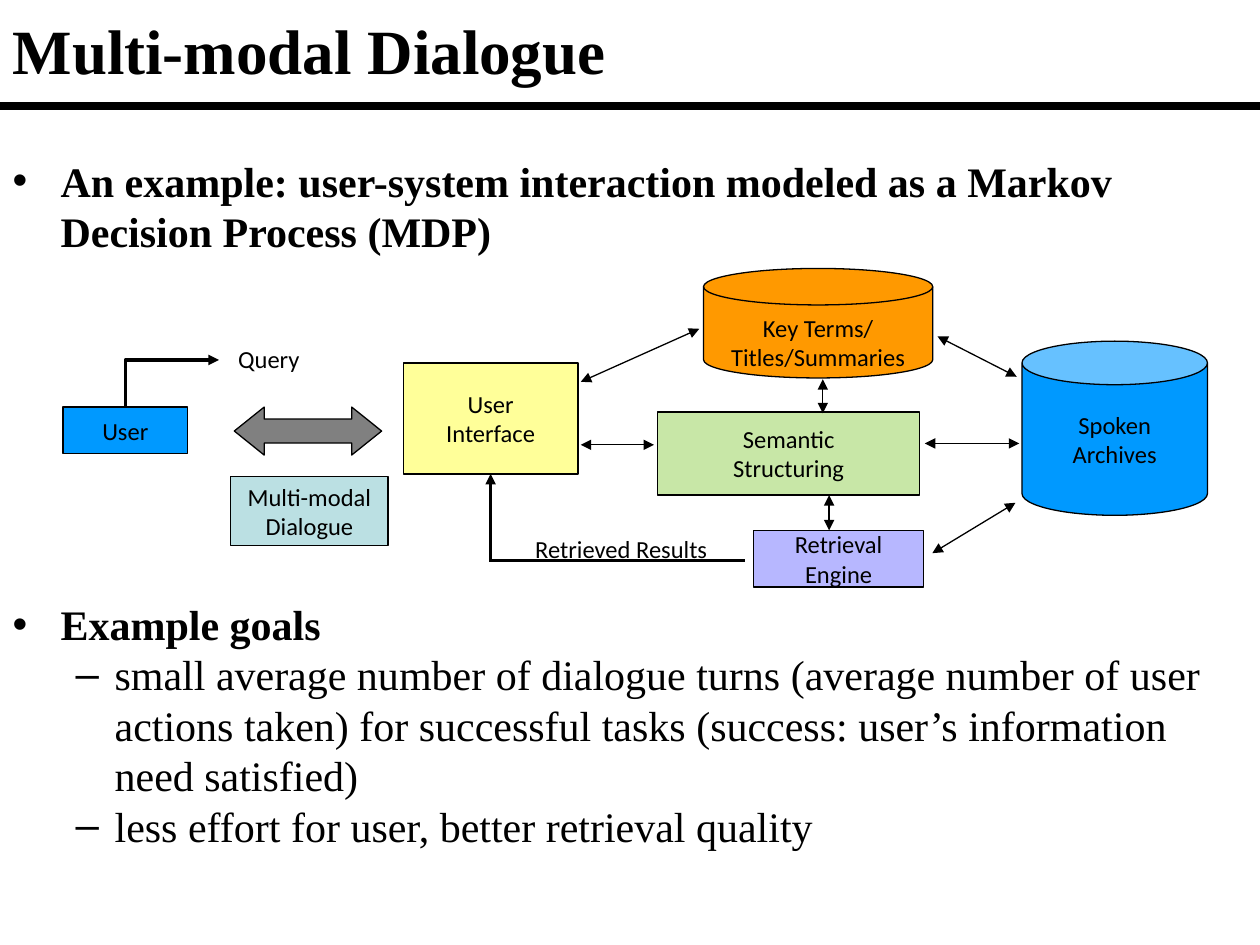
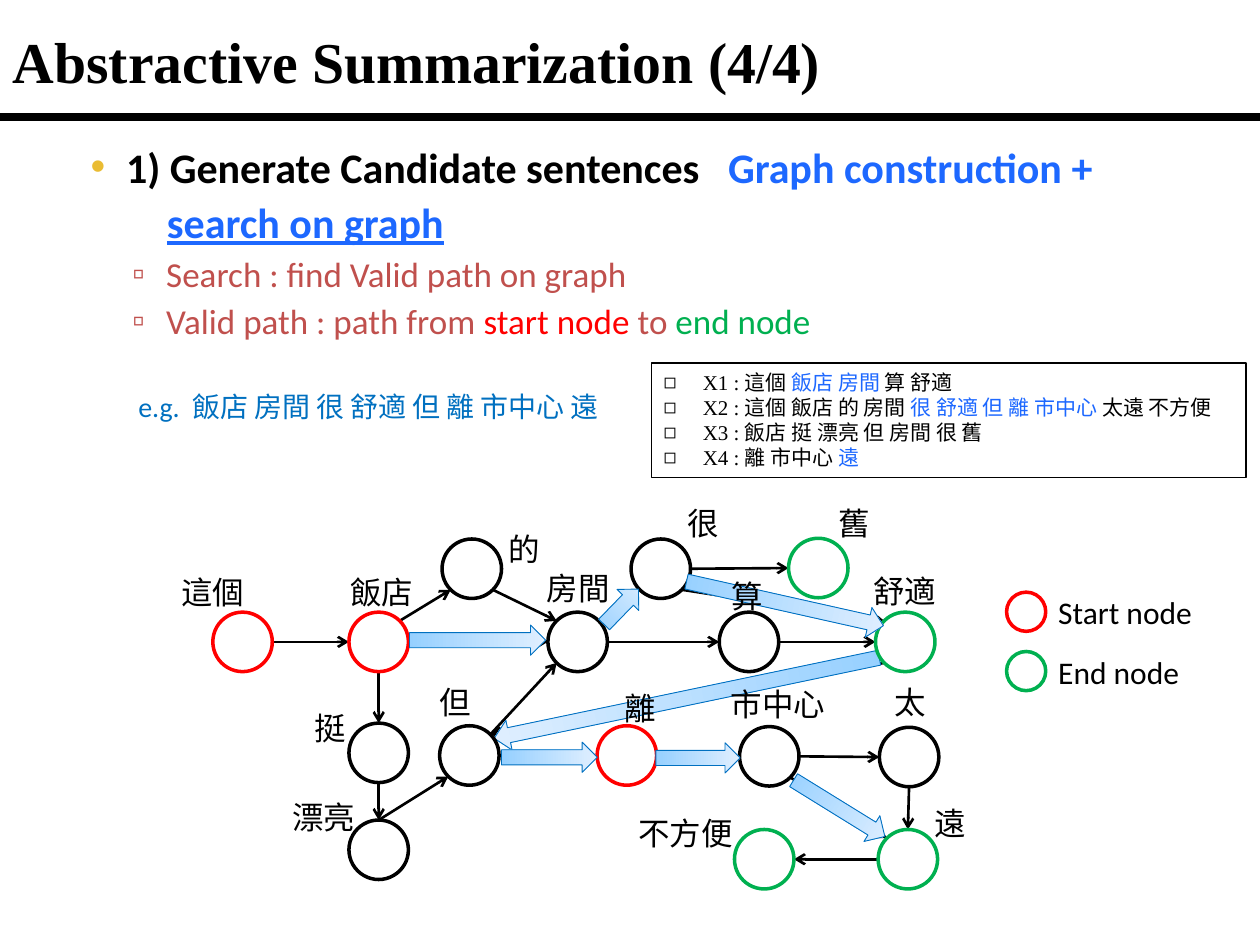
"""Builds two slides: a multi-modal dialogue diagram and a word graph for summarization."""
from dataclasses import dataclass
from math import atan2, degrees, hypot, sqrt

from lxml.etree import SubElement
from pptx import Presentation
from pptx.dml.color import RGBColor
from pptx.enum.shapes import MSO_CONNECTOR, MSO_SHAPE
from pptx.enum.text import MSO_ANCHOR, MSO_AUTO_SIZE, PP_ALIGN
from pptx.oxml.ns import qn
from pptx.util import Pt


@dataclass(frozen=True)
class Theme:
    """Colours, fonts and type sizes shared by the slides."""
    black: str = "000000"
    white: str = "FFFFFF"
    blue: str = "1D68FF"
    example_blue: str = "0070C0"
    sky: str = "0099FF"
    orange: str = "FF9900"
    yellow: str = "FFFF99"
    lilac: str = "B7B7FF"
    teal: str = "BBE0E3"
    lime: str = "92D050"
    gray: str = "808080"
    gold: str = "EABC33"
    brick: str = "C0504D"
    red: str = "FF0000"
    green: str = "00B050"
    path_dark: str = "96D0FF"
    path_light: str = "E0EFFF"
    serif: str = "Times New Roman"
    sans: str = "Calibri"
    label: str = "Arial"
    heading: int = 24
    subheading: int = 20
    node: int = 18
    example: int = 16
    diagram: int = 14
    sentence: int = 12


THEME = Theme()


@dataclass(frozen=True)
class Run:
    """One stretch of text; gap widens its letter spacing in points."""
    text: str
    color: str = THEME.black
    size: float = THEME.heading
    font: str = THEME.serif
    bold: bool = False
    underline: bool = False
    gap: float = 0


@dataclass(frozen=True)
class Item:
    """One paragraph of a list."""
    runs: tuple
    left: float = 0
    hanging: float = 0
    bullet: str = ""
    bullet_color: str = THEME.black
    level: int = 0
    before: float = 0
    line_spacing: float = 1


def serif_head(text, line_spacing=1):
    return Item((Run(text, bold=True),), 27.4, 27.4, "•", before=4.8, line_spacing=line_spacing)


def goal(text):
    return Item((Run(text),), 58.3, 22.3, "–", level=1)


def sans_head(*runs, **layout):
    return Item(tuple(Run(text, color, font=THEME.sans, bold=True, **style)
                      for text, color, style in runs), before=3, **layout)


def rule_item(*pairs):
    return Item(tuple(Run(text, color, THEME.subheading, THEME.sans) for text, color in pairs),
                51.8, 19.4, "▫", THEME.brick, 1, 3)


def sentence(*pairs):
    return Item(tuple(Run(text, color, THEME.sentence) for text, color in pairs), 22.3, 22.3, "◻")


MODEL = [serif_head("An example: user-system interaction modeled as a Markov Decision Process (MDP)")]
GOALS = [
    serif_head("Example goals", 1.2),
    goal("small average number of dialogue turns (average number of user actions taken) "
         "for successful tasks (success: user’s information need satisfied)"),
    goal("less effort for user, better retrieval quality"),
]
BOXES = [
    ("Key Terms/\nTitles/Summaries", MSO_SHAPE.FLOWCHART_MAGNETIC_DISK, (402, 153.4, 131, 62.6), THEME.orange),
    ("Spoken\nArchives", MSO_SHAPE.CAN, (584, 195, 106, 99.5), THEME.sky),
    ("User", MSO_SHAPE.RECTANGLE, (36, 232.6, 71.3, 26.6), THEME.sky),
    ("Retrieval\nEngine", MSO_SHAPE.RECTANGLE, (430.6, 303.1, 97.2, 32.4), THEME.lilac),
    ("User\nInterface", MSO_SHAPE.RECTANGLE, (230.4, 207.4, 100, 63.4), THEME.yellow),
    ("Multi-modal\nDialogue", MSO_SHAPE.RECTANGLE, (131.8, 272.2, 90, 39.6), THEME.teal),
    ("Semantic\nStructuring", MSO_SHAPE.RECTANGLE, (375.8, 235.4, 149.8, 47.5), THEME.lime),
    ("", MSO_SHAPE.LEFT_RIGHT_ARROW, (133.9, 232.6, 84.2, 27.4), THEME.gray),
]
TWO_WAY_LINKS = [
    (535.7, 192.2, 581, 215.3), (399.6, 187.9, 331.9, 218.2), (528.5, 253.4, 582.5, 253.4),
    (532.8, 316.1, 580.3, 287.3), (470.2, 216.7, 470.2, 236.2), (473.8, 283, 473.8, 303.1),
    (331.9, 254.2, 373.7, 254.2),
]
CAPTIONS = [("Retrieved Results", (278, 301.7, 154, 23)), ("Query", (127.4, 193, 52.6, 23))]

SEARCH = [
    sans_head(("1) Generate Candidate sentences", THEME.black, {}), (" ", THEME.black, {"gap": 10.8}),
              ("Graph construction +", THEME.blue, {}),
              left=28.8, hanging=20.2, bullet="•", bullet_color=THEME.gold),
    sans_head(("search on graph", THEME.blue, {"underline": True}), left=52.2),
    rule_item(("Search : find Valid path on graph", THEME.brick)),
    rule_item(("Valid path : path from ", THEME.brick), ("start node ", THEME.red),
              ("to ", THEME.brick), ("end node", THEME.green)),
]
SENTENCES = [
    sentence(("X1 : 這個 ", THEME.black), ("飯店 房間 ", THEME.blue), ("算 舒適", THEME.black)),
    sentence(("X2 : 這個 飯店 的 房間 ", THEME.black), ("很 舒適 但 離 市中心 ", THEME.blue),
             ("太遠 不方便", THEME.black)),
    sentence(("X3 : 飯店 挺 漂亮 但 房間 很 舊", THEME.black)),
    sentence(("X4 : 離 市中心 ", THEME.black), ("遠", THEME.blue)),
]
EXAMPLE = [Item(tuple(Run(text, THEME.example_blue, THEME.example, THEME.sans, gap=gap)
                      for text, gap in [("e.g.", 0), (" ", 3.6), ("飯店 房間 很 舒適 但 離 市中心 遠", 0)]))]
NODES = {
    "這個": ((138.6, 366.8), (96.5, 324), THEME.red),
    "飯店": ((216.4, 366.8), (193, 324), THEME.red),
    "房間": ((330.1, 366.8), (305.3, 321.8), THEME.black),
    "算": ((428, 366.8), (411.1, 326.2), THEME.black),
    "舒適": ((517.3, 366.8), (491.8, 323.3), THEME.green),
    "的": ((269.6, 325), (283.7, 299.5), THEME.black),
    "很": ((377.6, 325), (385.9, 284.4), THEME.black),
    "舊": ((467.6, 324.6), (472.3, 284.4), THEME.green),
    "挺": ((216.4, 430.2), (172.8, 401.8), THEME.black),
    "漂亮": ((216.4, 485.6), (159.8, 452.2), THEME.black),
    "但": ((268.2, 431.7), (244.1, 386.6), THEME.black),
    "離": ((358.2, 431.7), (349.9, 390.2), THEME.red),
    "市中心": ((439.6, 432.2), (410.4, 388.1), THEME.black),
    "太": ((519.5, 432.6), (504, 386.6), THEME.black),
    "遠": ((518.8, 491), (527, 455.8), THEME.green),
    "不方便": ((436.7, 491), (357.8, 461.5), THEME.green),
}
EDGES = [
    ("這個", "E", "飯店", "W"), ("飯店", "E", "房間", "W"), ("房間", "E", "算", "W"),
    ("算", "E", "舒適", "W"), ("很", "E", "舊", "W"), ("飯店", "NE", "的", "SW"),
    ("的", "SE", "房間", "NW"), ("房間", "NE", "很", "SW"), ("很", "SE", "舒適", "NW"),
    ("飯店", "S", "挺", "N"), ("挺", "S", "漂亮", "N"), ("漂亮", "N", "但", "SW"),
    ("但", "NE", "房間", "SW"), ("舒適", "SW", "但", "NE"), ("但", "E", "離", "W"),
    ("離", "E", "市中心", "W"), ("市中心", "E", "太", "W"), ("太", "S", "遠", "N"),
    ("遠", "W", "不方便", "E"), ("市中心", "SE", "遠", "NW"),
]
RETURN_PATH = (502.4, 375.9, 282.4, 421.9)
FORWARD_PATH = [
    (234, 365.8, 311.8, 365.8), (345.2, 356.8, 364.8, 336.6), (392.3, 332.3, 504.8, 357.5),
    (286.6, 432.7, 341.3, 432.7), (374.8, 433.1, 423, 433.1), (453.5, 445.8, 505.6, 478),
]
LEGEND = [("Start node", THEME.red, 349.6), ("End node", THEME.green, 383.5)]
RADIUS = 17


def rgb(color):
    return RGBColor.from_string(color)


def points(values):
    return [Pt(value) for value in values]


def place(shape, box):
    shape.left, shape.top, shape.width, shape.height = points(box)


def write(shape, items, anchor=MSO_ANCHOR.TOP, align=PP_ALIGN.LEFT, wrap=True):
    frame = shape.text_frame
    frame.word_wrap, frame.auto_size, frame.vertical_anchor = wrap, MSO_AUTO_SIZE.NONE, anchor
    for number, item in enumerate(items):
        paragraph = frame.add_paragraph() if number else frame.paragraphs[0]
        paragraph.alignment, paragraph.level = align, item.level
        paragraph.space_before, paragraph.line_spacing = Pt(item.before), item.line_spacing
        properties = paragraph._p.get_or_add_pPr()
        properties.set("marL", str(Pt(item.left)))
        properties.set("indent", str(-Pt(item.hanging)))
        if item.bullet:
            SubElement(SubElement(properties, qn("a:buClr")), qn("a:srgbClr"), val=item.bullet_color)
            SubElement(properties, qn("a:buFont"), typeface=THEME.label)
            SubElement(properties, qn("a:buChar"), char=item.bullet)
        else:
            SubElement(properties, qn("a:buNone"))
        for part in item.runs:
            run = paragraph.add_run()
            run.text = part.text
            font = run.font
            font.name, font.size, font.color.rgb = part.font, Pt(part.size), rgb(part.color)
            font.bold, font.underline = part.bold, part.underline
            if part.gap:
                run._r.get_or_add_rPr().set("spc", str(round(part.gap * 100)))


def add_text(slide, items, box, **layout):
    shape = slide.shapes.add_textbox(*points(box))
    write(shape, items, **layout)


def add_figure(slide, kind, box, fill=None, line=THEME.black, width=0.75):
    shape = slide.shapes.add_shape(kind, *points(box))
    shape.shadow.inherit = False
    if fill:
        shape.fill.solid()
        shape.fill.fore_color.rgb = rgb(fill)
    else:
        shape.fill.background()
    shape.line.color.rgb, shape.line.width = rgb(line), Pt(width)
    return shape


def add_line(slide, ends, width, kind=MSO_CONNECTOR.STRAIGHT, head=None, tail=None):
    connector = slide.shapes.add_connector(kind, *points(ends))
    connector.line.color.rgb, connector.line.width = rgb(THEME.black), Pt(width)
    line = connector.line._get_or_add_ln()
    for tag, arrow in (("a:headEnd", head), ("a:tailEnd", tail)):
        if arrow:
            SubElement(line, qn(tag), type=arrow)
    SubElement(connector._element.spPr, qn("a:effectLst"))
    return connector


def add_titled_slide(presentation, layout, title, size, top, rule):
    slide = presentation.slides.add_slide(presentation.slide_layouts[layout])
    place(slide.shapes.title, (0, top, 719.3, 56.9))
    write(slide.shapes.title, [Item((Run(title, size=size, bold=True),))], MSO_ANCHOR.MIDDLE)
    add_line(slide, (0, rule, 720, rule), 4.5)
    return slide


def fill_body(slide, index, items, box):
    body = slide.placeholders[index]
    place(body, box)
    write(body, items)


def diagram_lines(text):
    return [Item((Run(line, size=THEME.diagram, font=THEME.sans),)) for line in text.split("\n")]


def build_dialogue(presentation):
    slide = add_titled_slide(presentation, 3, "Multi-modal Dialogue", 36, 0, 60.5)
    fill_body(slide, 1, MODEL, (0, 85, 719.3, 65.5))
    fill_body(slide, 2, GOALS, (0, 332.6, 720, 158.4))
    figures = {}
    for text, kind, box, fill in BOXES:
        figure = figures[text] = add_figure(slide, kind, box, fill)
        if text:
            write(figure, diagram_lines(text), MSO_ANCHOR.MIDDLE, PP_ALIGN.CENTER, False)
    disk = figures["Key Terms/\nTitles/Summaries"].text_frame
    disk.margin_top, disk.margin_bottom = Pt(14.4), Pt(2.9)
    figures[""].adjustments[1] = 0.623
    semantic = figures["Semantic\nStructuring"]._element.spPr
    SubElement(semantic.find(qn("a:solidFill"))[0], qn("a:alpha"), val="50000")
    for text, box in CAPTIONS:
        add_text(slide, diagram_lines(text), box, align=PP_ALIGN.CENTER)
    for ends in TWO_WAY_LINKS:
        add_line(slide, ends, 0.75, head="triangle", tail="triangle")
    add_line(slide, (425.5, 320.4, 279.6, 320.4), 2)
    results = add_line(slide, (280.4, 320.4, 280.4, 270.8), 2, tail="triangle")
    results.end_connect(figures["User\nInterface"], 2)
    query = add_line(slide, (85, 192.3, 111.7, 245.8), 2, MSO_CONNECTOR.ELBOW, tail="triangle")
    geometry = query._element.spPr
    geometry.find(qn("a:prstGeom")).set("prst", "bentConnector2")
    for name, value in (("rot", "5400000"), ("flipH", "1"), ("flipV", "1")):
        geometry.find(qn("a:xfrm")).set(name, value)


def rim_point(word, compass):
    (x, y), _, _ = NODES[word]
    across = ("E" in compass) - ("W" in compass)
    down = ("S" in compass) - ("N" in compass)
    reach = RADIUS / sqrt(len(compass))
    return x + across * reach, y + down * reach


def add_path_arrow(slide, ends):
    x1, y1, x2, y2 = ends
    length, width = hypot(x2 - x1, y2 - y1), 17.3
    box = ((x1 + x2 - width) / 2, (y1 + y2 - length) / 2, width, length)
    arrow = add_figure(slide, MSO_SHAPE.DOWN_ARROW, box, line=THEME.example_blue, width=0.5)
    arrow.rotation = degrees(atan2(y2 - y1, x2 - x1)) - 90
    arrow.fill.gradient()
    arrow.fill.gradient_angle = 270
    for stop, color in zip(arrow.fill.gradient_stops, (THEME.path_dark, THEME.path_light)):
        stop.color.rgb = rgb(color)


def add_circle(slide, x, y, radius, color):
    box = (x - radius, y - radius, 2 * radius, 2 * radius)
    add_figure(slide, MSO_SHAPE.OVAL, box, THEME.white, color, 2)


def build_word_graph(presentation):
    slide = add_titled_slide(presentation, 1, "Abstractive Summarization (4/4)", 33, 5.8, 67)
    fill_body(slide, 1, SEARCH, (36, 77, 675.4, 123))
    for source, leave, target, arrive in EDGES:
        add_line(slide, rim_point(source, leave) + rim_point(target, arrive), 1.5, tail="arrow")
    add_path_arrow(slide, RETURN_PATH)
    for center, _, color in NODES.values():
        add_circle(slide, *center, RADIUS, color)
    for ends in FORWARD_PATH:
        add_path_arrow(slide, ends)
    for word, (_, corner, _) in NODES.items():
        label = [Item((Run(word, size=THEME.node, font=THEME.label),))]
        add_text(slide, label, (*corner, 18 * len(word) + 21, 28.8))
    for text, color, middle in LEGEND:
        add_circle(slide, 586.4, middle, 11.2, color)
        label = [Item((Run(text, size=THEME.node, font=THEME.sans),))]
        add_text(slide, label, (597.6, middle - 14, 100, 28.8))
    frame = add_figure(slide, MSO_SHAPE.RECTANGLE, (372.2, 207.4, 339.8, 65.5))
    write(frame, SENTENCES)
    add_text(slide, EXAMPLE, (72, 218.9, 283, 26.6))


def main():
    presentation = Presentation()
    presentation.slide_width, presentation.slide_height = Pt(720), Pt(540)
    build_dialogue(presentation)
    build_word_graph(presentation)
    presentation.save("out.pptx")


if __name__ == "__main__":
    main()
